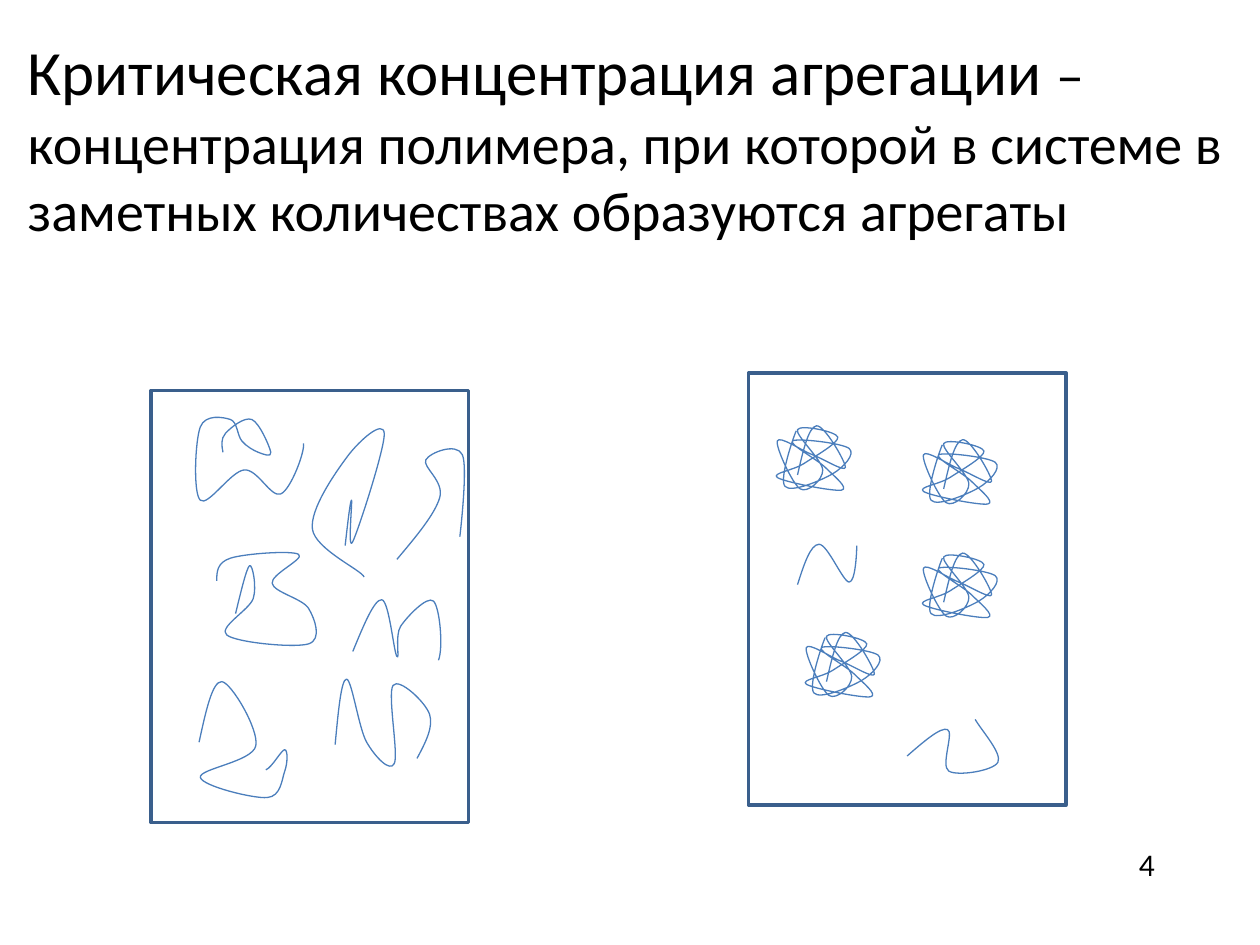
from itertools import chain

from lxml import etree
from pptx import Presentation
from pptx.dml.color import RGBColor
from pptx.enum.shapes import MSO_SHAPE
from pptx.enum.text import MSO_ANCHOR, MSO_AUTO_SIZE, PP_ALIGN
from pptx.oxml.ns import qn
from pptx.util import Inches, Pt

RECTANGLE = MSO_SHAPE.RECTANGLE
TOP = MSO_ANCHOR.TOP
NO_AUTOFIT = MSO_AUTO_SIZE.NONE
LEFT = PP_ALIGN.LEFT

COLORS = {"text": "000000", "vessel": "FFFFFF", "outline": "3A5F8C", "strand": "4B7EBC"}

TITLE = [
    ("Критическая концентрация агрегации ", 36),
    ("– концентрация полимера, при которой в системе в заметных количествах "
     "образуются агрегаты", 32),
]

VESSEL_SIZE = (2.52, 3.43)
VESSELS = [(1.2, 3.1), (5.94, 2.96)]

# Each polymer strand: the points it runs through, then the control point before its end.
FREE_STRANDS = [
    ([(1.77, 3.59), (1.79, 3.44), (2, 3.33), (2.15, 3.59), (2.05, 3.59), (1.92, 3.5),
      (1.83, 3.33), (1.59, 3.39), (1.59, 3.97), (1.94, 3.73), (2.23, 3.92), (2.41, 3.52)],
     (2.42, 3.59)),
    ([(3.15, 4.44), (3.49, 3.95), (3.38, 3.65), (3.67, 3.61), (3.65, 4.26)], (3.65, 4.26)),
    ([(2.66, 5.91), (2.75, 5.39), (2.91, 5.89), (3.13, 6.06), (3.12, 5.44), (3.41, 5.67),
      (3.31, 6.02)], (3.38, 5.89)),
    ([(1.87, 4.87), (1.98, 4.49), (2.01, 4.75), (1.8, 5.04), (2.45, 5.11), (2.45, 4.83),
      (2.16, 4.63), (2.37, 4.4), (1.83, 4.43), (1.72, 4.61)], (1.72, 4.54)),
    ([(1.58, 5.89), (1.76, 5.41), (2.03, 5.92), (1.59, 6.17), (2.12, 6.33), (2.26, 6.12),
      (2.26, 5.95), (2.11, 6.11)], (2.16, 6.09)),
    ([(2.74, 4.33), (2.79, 3.97), (2.8, 4.3), (3.05, 3.44), (2.76, 3.62), (2.48, 4.2),
      (2.89, 4.58)], (2.88, 4.53)),
    ([(2.8, 5.17), (3.03, 4.76), (3.15, 5.21), (3.18, 4.97), (3.44, 4.77), (3.48, 5.24)],
     (3.52, 5.14)),
    ([(6.33, 4.64), (6.5, 4.32), (6.74, 4.62), (6.8, 4.33)], (6.8, 4.38)),
    ([(7.2, 6), (7.52, 5.79), (7.53, 6.12), (7.92, 6.05), (7.74, 5.71)], (7.8, 5.81)),
]

AGGREGATE = (
    [(6.33, 3.77), (6.48, 3.38), (6.71, 3.71), (6.45, 3.61), (6.17, 3.5), (6.35, 3.88),
     (6.53, 3.73), (6.33, 3.41), (6.65, 3.47), (6.38, 3.68), (6.17, 3.79), (6.68, 3.89),
     (6.55, 3.71), (6.29, 3.5), (6.74, 3.56), (6.61, 3.76), (6.23, 3.86), (6.32, 3.42)],
    (6.3, 3.46),
)
AGGREGATE_SHIFTS = [(0, 0), (1.16, 1.01), (0.23, 1.64), (1.16, 0.11)]


def midpoint(first, second):
    return (first[0] + second[0]) / 2, (first[1] + second[1]) / 2


def spline_vertices(points, end_control):
    """Return two control points and an end point for every stretch between points."""
    before, after = [], []
    for previous, point, following in zip(points, points[1:], points[2:]):
        pull_x = (following[0] - previous[0]) / 6
        pull_y = (following[1] - previous[1]) / 6
        before.append((point[0] - pull_x, point[1] - pull_y))
        after.append((point[0] + pull_x, point[1] + pull_y))
    after.insert(0, midpoint(points[0], before[0]))
    before.append(end_control)
    return list(chain.from_iterable(zip(after, before, points[1:])))


class SlideBuilder:
    """Holds the font, the colours and the slide being filled."""

    def __init__(self, slide, font, colors):
        self.slide = slide
        self.font = font
        self.colors = {name: RGBColor.from_string(value) for name, value in colors.items()}

    def style_text(self, paragraph):
        paragraph.alignment = LEFT
        paragraph.font.name = self.font
        paragraph.font.color.rgb = self.colors["text"]

    def title(self, spans, left, top, width, height):
        box = self.slide.shapes.title
        box.left, box.top = Inches(left), Inches(top)
        box.width, box.height = Inches(width), Inches(height)
        frame = box.text_frame
        frame.auto_size = NO_AUTOFIT
        frame.vertical_anchor = TOP
        paragraph = frame.paragraphs[0]
        self.style_text(paragraph)
        for text, size in spans:
            span = paragraph.add_run()
            span.text = text
            span.font.size = Pt(size)

    def label(self, text, size, left, top, width, height):
        box = self.slide.shapes.add_textbox(
            Inches(left), Inches(top), Inches(width), Inches(height))
        box.text_frame.word_wrap = True
        paragraph = box.text_frame.paragraphs[0]
        paragraph.text = text
        paragraph.font.size = Pt(size)
        self.style_text(paragraph)

    def outline(self, shape, color, weight):
        shape.shadow.inherit = False
        shape.line.color.rgb = self.colors[color]
        shape.line.width = Pt(weight)

    def vessel(self, left, top, width, height):
        box = self.slide.shapes.add_shape(
            RECTANGLE, Inches(left), Inches(top), Inches(width), Inches(height))
        box.fill.solid()
        box.fill.fore_color.rgb = self.colors["vessel"]
        self.outline(box, "outline", 2)

    def strand(self, points, end_control, shift=(0, 0)):
        """Draw a smooth open curve through the points."""
        start, *vertices = [
            (Inches(x + shift[0]), Inches(y + shift[1]))
            for x, y in [points[0], *spline_vertices(points, end_control)]]
        builder = self.slide.shapes.build_freeform(*start)
        builder.add_line_segments(vertices, close=False)
        curve = builder.convert_to_shape()
        # Every three straight segments become one Bezier segment.
        segments = curve._element.xpath(".//a:lnTo")
        for index in range(0, len(segments), 3):
            bezier = etree.Element(qn("a:cubicBezTo"))
            segments[index].addprevious(bezier)
            for segment in segments[index:index + 3]:
                bezier.append(segment[0])
                segment.getparent().remove(segment)
        curve.fill.background()
        self.outline(curve, "strand", 0.75)


def main():
    deck = Presentation()
    deck.slide_width, deck.slide_height = Inches(10), Inches(7.5)
    title_only = deck.slide_layouts[5]
    page = SlideBuilder(deck.slides.add_slide(title_only), "Calibri", COLORS)

    page.title(TITLE, 0.12, 0.21, 9.76, 2.52)
    page.label("4", 18, 8.94, 6.66, 0.39, 0.4)
    for corner in VESSELS:
        page.vessel(*corner, *VESSEL_SIZE)
    for points, end_control in FREE_STRANDS:
        page.strand(points, end_control)
    for shift in AGGREGATE_SHIFTS:
        page.strand(*AGGREGATE, shift)

    deck.save("out.pptx")


if __name__ == "__main__":
    main()
